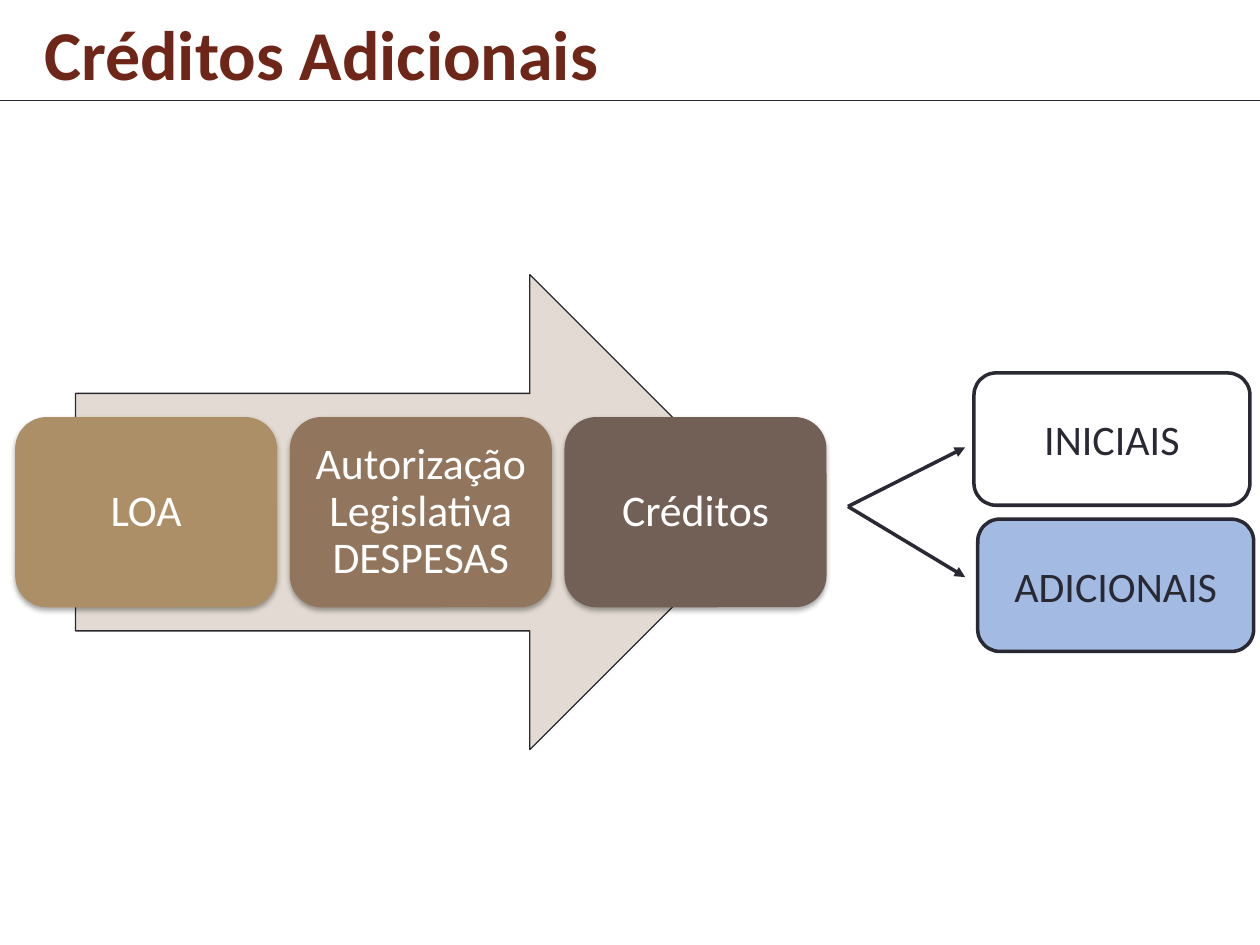
from lxml import etree
from pptx import Presentation
from pptx.dml.color import RGBColor
from pptx.enum.shapes import MSO_CONNECTOR, MSO_SHAPE
from pptx.enum.text import MSO_ANCHOR, MSO_AUTO_SIZE, PP_ALIGN
from pptx.oxml.ns import qn
from pptx.util import Inches, Pt

ROUNDED = MSO_SHAPE.ROUNDED_RECTANGLE
RIGHT_ARROW = MSO_SHAPE.RIGHT_ARROW
STRAIGHT = MSO_CONNECTOR.STRAIGHT
TOP, MIDDLE = MSO_ANCHOR.TOP, MSO_ANCHOR.MIDDLE
LEFT, CENTER = PP_ALIGN.LEFT, PP_ALIGN.CENTER
FIT_SHAPE = MSO_AUTO_SIZE.SHAPE_TO_FIT_TEXT

INK = RGBColor(0x29, 0x29, 0x34)
WHITE = RGBColor(0xFF, 0xFF, 0xFF)
MAROON = RGBColor(0x6E, 0x26, 0x19)
SAND = RGBColor(0xE3, 0xDB, 0xD3)
GOLD = RGBColor(0xAD, 0x8F, 0x67)
BROWN = RGBColor(0x91, 0x75, 0x5D)
UMBER = RGBColor(0x72, 0x60, 0x56)
BLUE = RGBColor(0xA3, 0xBA, 0xE2)


class SlideBuilder:
    font_name = "Calibri"

    def __init__(self, slide):
        self.slide = slide

    def set_text(self, shape, text, size, color, bold=False, align=CENTER,
                 anchor=MIDDLE, frame_format=None, line_spacing=None):
        frame = shape.text_frame
        frame.text = text
        frame_values = {"vertical_anchor": anchor, "word_wrap": True}
        frame_values.update(frame_format or {})
        paragraph = frame.paragraphs[0]
        font = paragraph.runs[0].font
        font.color.rgb = color
        formats = (
            (frame, frame_values),
            (paragraph, {"alignment": align, "line_spacing": line_spacing}),
            (font, {"name": self.font_name, "size": Pt(size), "bold": bold}),
        )
        for target, values in formats:
            for name, value in values.items():
                setattr(target, name, value)

    def title(self, text, left, top, width, height):
        title = self.slide.shapes.title
        position = {"left": left, "top": top, "width": width, "height": height}
        for name, value in position.items():
            setattr(title, name, Inches(value))
        self.set_text(title, text, 40, MAROON, bold=True, align=LEFT, anchor=TOP,
                      frame_format={"word_wrap": False, "auto_size": FIT_SHAPE})

    def shape(self, kind, left, top, width, height, fill, line_width=None):
        shape = self.slide.shapes.add_shape(
            kind, Inches(left), Inches(top), Inches(width), Inches(height))
        shape.shadow.inherit = False
        shape.fill.solid()
        shape.fill.fore_color.rgb = fill
        if line_width:
            shape.line.color.rgb = INK
            shape.line.width = Pt(line_width)
        else:
            shape.line.fill.background()
        return shape

    def step_card(self, text, left, top, width, height, fill):
        card = self.shape(ROUNDED, left, top, width, height, fill)
        self.soft_shadow(card)
        margins = {f"margin_{side}": Inches(0.1)
                   for side in ("left", "top", "right", "bottom")}
        self.set_text(card, text, 25, WHITE, frame_format=margins, line_spacing=0.9)

    def soft_shadow(self, shape):
        effects = shape.element.spPr.find(qn("a:effectLst"))
        shadow = etree.SubElement(
            effects, qn("a:outerShdw"), blurRad=str(Pt(3.1)), dist=str(Pt(1.8)),
            dir="5400000", rotWithShape="0")
        color = etree.SubElement(shadow, qn("a:srgbClr"), val="000000")
        etree.SubElement(color, qn("a:alpha"), val="35000")

    def outlined_box(self, text, left, top, width, height, fill):
        box = self.shape(ROUNDED, left, top, width, height, fill, line_width=2)
        self.set_text(box, text, 24, INK)

    def line(self, start, end, width, arrow=False):
        points = [Inches(value) for value in (*start, *end)]
        connector = self.slide.shapes.add_connector(STRAIGHT, *points)
        connector.line.color.rgb = INK
        connector.line.width = Pt(width)
        properties = connector.element.spPr
        if arrow:
            outline = properties.find(qn("a:ln"))
            etree.SubElement(outline, qn("a:tailEnd"), type="triangle")
        etree.SubElement(properties, qn("a:effectLst"))


def main():
    presentation = Presentation()
    presentation.slide_width = Inches(10)
    presentation.slide_height = Inches(7.5)
    title_only = presentation.slide_layouts[5]
    builder = SlideBuilder(presentation.slides.add_slide(title_only))

    builder.title("Créditos Adicionais", 0.25, 0.03, 4.65, 0.77)
    builder.line((0, 0.8), (10, 0.8), 0.75)

    builder.shape(RIGHT_ARROW, 0.6, 2.18, 5.49, 3.77, SAND, line_width=0.75)
    steps = (("LOA", GOLD),
             ("Autorização Legislativa DESPESAS", BROWN),
             ("Créditos", UMBER))
    card_width, card_gap = 2.08, 0.1
    for index, (text, fill) in enumerate(steps):
        left = 0.12 + index * (card_width + card_gap)
        builder.step_card(text, left, 3.31, card_width, 1.51, fill)

    fork = (6.73, 4.02)
    branches = (("INICIAIS", 7.73, 2.96, WHITE, 3.55),
                ("ADICIONAIS", 7.76, 4.12, BLUE, 4.58))
    for text, left, top, fill, arrow_end in branches:
        builder.line(fork, (7.66, arrow_end), 2, arrow=True)
        builder.outlined_box(text, left, top, 2.19, 1.05, fill)

    presentation.save("out.pptx")


if __name__ == "__main__":
    main()
